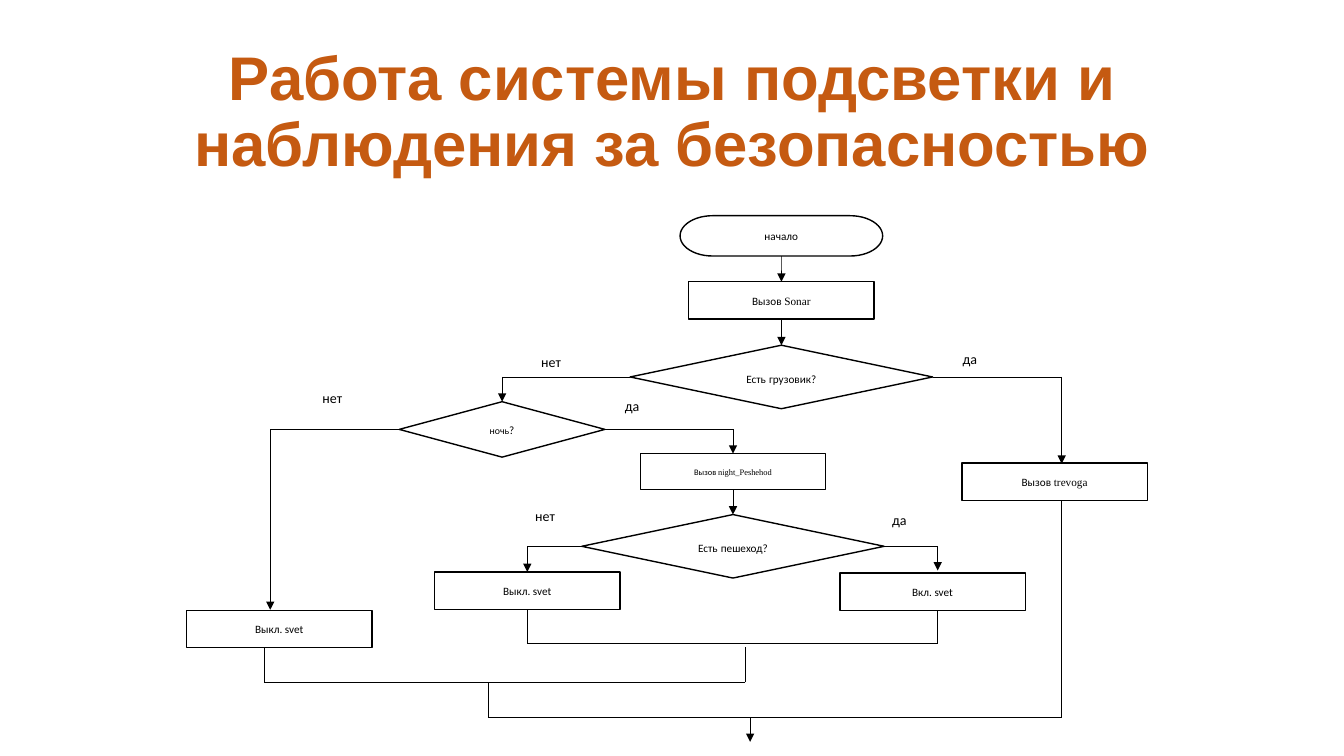
import pptx
import pptx.dml.color
import pptx.enum.shapes
import pptx.enum.text
import pptx.util
from lxml import etree
from pptx.oxml.ns import qn
from pptx.util import Inches

SHAPES = pptx.enum.shapes.MSO_SHAPE
TOP, LEFT, BOTTOM, RIGHT = range(4)
BLACK, WHITE = "000000", "FFFFFF"
SERIF = "Times New Roman"


def paint(color_format, hex_color):
    color_format.rgb = pptx.dml.color.RGBColor.from_string(hex_color)


def set_font(font, size, name, color):
    font.size = pptx.util.Pt(size)
    font.name = name
    paint(font.color, color)


def add_title(slide, left, top, width, height):
    title = slide.shapes.title
    title.left, title.top = Inches(left), Inches(top)
    title.width, title.height = Inches(width), Inches(height)
    frame = title.text_frame
    frame.text = "Работа системы подсветки и наблюдения за безопасностью"
    frame.auto_size = pptx.enum.text.MSO_AUTO_SIZE.NONE
    frame.vertical_anchor = pptx.enum.text.MSO_ANCHOR.MIDDLE
    heading = frame.paragraphs[0]
    heading.alignment = pptx.enum.text.PP_ALIGN.CENTER
    heading.line_spacing = 0.9
    set_font(heading.font, 44, "Arial", "C55A11")
    heading.font.bold = True
    # Letter outline
    properties = heading._p.pPr.find(qn("a:defRPr"))
    outline = etree.Element(qn("a:ln"), w=str(pptx.util.Pt(1.75)))
    fill = etree.SubElement(outline, qn("a:solidFill"))
    etree.SubElement(fill, qn("a:srgbClr"), val="ED7D31")
    properties.insert(0, outline)


def add_flowchart(slide, left, top):
    """Draw the flowchart; all positions are measured from its top left corner."""

    def step(center_x, center_y, runs, kind=SHAPES.RECTANGLE, width=1.84,
             height=0.37, size=8, space_after=0):
        block = slide.shapes.add_shape(
            kind, Inches(left + center_x - width / 2),
            Inches(top + center_y - height / 2), Inches(width), Inches(height))
        block.shadow.inherit = False
        block.fill.solid()
        paint(block.fill.fore_color, WHITE)
        paint(block.line.color, BLACK)
        block.line.width = pptx.util.Pt(1)
        frame = block.text_frame
        frame.word_wrap = True
        frame.vertical_anchor = pptx.enum.text.MSO_ANCHOR.MIDDLE
        caption = frame.paragraphs[0]
        caption.alignment = pptx.enum.text.PP_ALIGN.CENTER
        caption.line_spacing = 1.07
        caption.space_after = pptx.util.Pt(space_after)
        set_font(caption.font, size, "Calibri", BLACK)
        for text, run_font, run_size in runs:
            run = caption.add_run()
            run.text = text
            if run_font:
                run.font.name = run_font
            if run_size:
                run.font.size = pptx.util.Pt(run_size)
        return block

    def action(center_x, center_y, text, routine=None, **options):
        runs = [(text, None, None)]
        if routine:
            runs.append((routine, SERIF, None))
        options.setdefault("space_after", 8)
        return step(center_x, center_y, runs, **options)

    def decision(center_x, center_y, runs, width=3, height=0.63, size=8):
        return step(center_x, center_y, runs, SHAPES.FLOWCHART_DECISION,
                    width, height, size)

    def question(subject):
        return [("Есть", None, None), (" ", None, 10), (subject, None, None)]

    def locate(stop):
        """A stop is a point (x, y) or a (block, side) pair."""
        block, side = stop
        if isinstance(block, (int, float)):
            return Inches(left + block), Inches(top + side)
        x = block.left + {LEFT: 0, RIGHT: block.width}.get(side, block.width // 2)
        y = block.top + {TOP: 0, BOTTOM: block.height}.get(side, block.height // 2)
        return x, y

    def route(*stops, arrow=True):
        for start, end in zip(stops, stops[1:]):
            link = slide.shapes.add_connector(
                pptx.enum.shapes.MSO_CONNECTOR.STRAIGHT, *locate(start), *locate(end))
            for stop, join in ((start, link.begin_connect), (end, link.end_connect)):
                if not isinstance(stop[0], (int, float)):
                    join(*stop)
            paint(link.line.color, BLACK)
            link.line.width = pptx.util.Pt(0.5)
            if arrow and end is stops[-1]:
                etree.SubElement(link.line._get_or_add_ln(), qn("a:tailEnd"),
                                 type="triangle")
            etree.SubElement(link._element.spPr, qn("a:effectLst"))

    def label(text, x, y):
        answer = slide.shapes.add_textbox(
            Inches(left + x), Inches(top + y), Inches(0.73), Inches(0.37))
        answer.text_frame.word_wrap = True
        answer.text_frame.text = text
        line = answer.text_frame.paragraphs[0]
        line.line_spacing = 1.07
        line.space_after = pptx.util.Pt(8)
        set_font(line.font, 10, "Calibri", BLACK)

    # Steps and decisions
    start = step(5.9, 0.2, [("начало", None, None)],
                 SHAPES.FLOWCHART_TERMINATOR, 2.01, 0.4)
    sonar = action(5.9, 0.84, "Вызов ", "Sonar")
    truck = decision(5.9, 1.6, question("грузовик?"))
    night = decision(3.13, 2.12, [("ночь", None, None), ("?", None, 8)],
                     2.04, 0.55, 7)
    night_walk = action(5.42, 2.54, "Вызов ", "night_Peshehod",
                        height=0.36, size=6, space_after=0)
    walker = decision(5.42, 3.28, question("пешеход?"))
    action(8.61, 2.64, "Вызов ", "trevoga")
    light_off = action(3.38, 3.72, "Выкл. svet")
    action(7.4, 3.73, "Вкл. svet")
    action(0.92, 4.1, "Выкл. svet")

    # Branches
    alarm_x, light_on_x, day_x = 8.68, 7.45, 0.83
    route((start, BOTTOM), (sonar, TOP))
    route((sonar, BOTTOM), (truck, TOP))
    route((truck, LEFT), (3.13, 1.6), (night, TOP))
    route((truck, RIGHT), (alarm_x, 1.6), (alarm_x, 2.46))
    route((night, LEFT), (day_x, 2.12), (day_x, 3.91))
    route((night, RIGHT), (5.42, 2.12), (night_walk, TOP))
    route((night_walk, BOTTOM), (walker, TOP))
    route((walker, LEFT), (3.38, 3.28), (light_off, TOP))
    route((walker, RIGHT), (light_on_x, 3.28), (light_on_x, 3.52))

    # Merging lines and exit
    route((light_off, BOTTOM), (3.38, 4.24), (light_on_x, 4.24),
          (light_on_x, 3.91), arrow=False)
    route((0.77, 4.28), (0.77, 4.63), (5.54, 4.63), (5.54, 4.28), arrow=False)
    route((2.99, 4.63), (2.99, 4.98), (alarm_x, 4.98), (alarm_x, 2.83), arrow=False)
    route((5.59, 4.98), (5.59, 5.22))

    # Answers
    for x, y in ((7.6, 1.28), (4.25, 1.74), (6.9, 2.87)):
        label("да", x, y)
    for x, y in ((3.42, 1.31), (1.25, 1.66), (3.36, 2.83)):
        label("нет", x, y)


def main():
    deck = pptx.Presentation()
    deck.slide_width, deck.slide_height = Inches(13.33), Inches(7.5)
    slide = deck.slides.add_slide(deck.slide_layouts[5])
    add_title(slide, 0.92, 0.4, 11.5, 1.45)
    add_flowchart(slide, 1.85, 2.14)
    deck.save("out.pptx")


if __name__ == "__main__":
    main()
